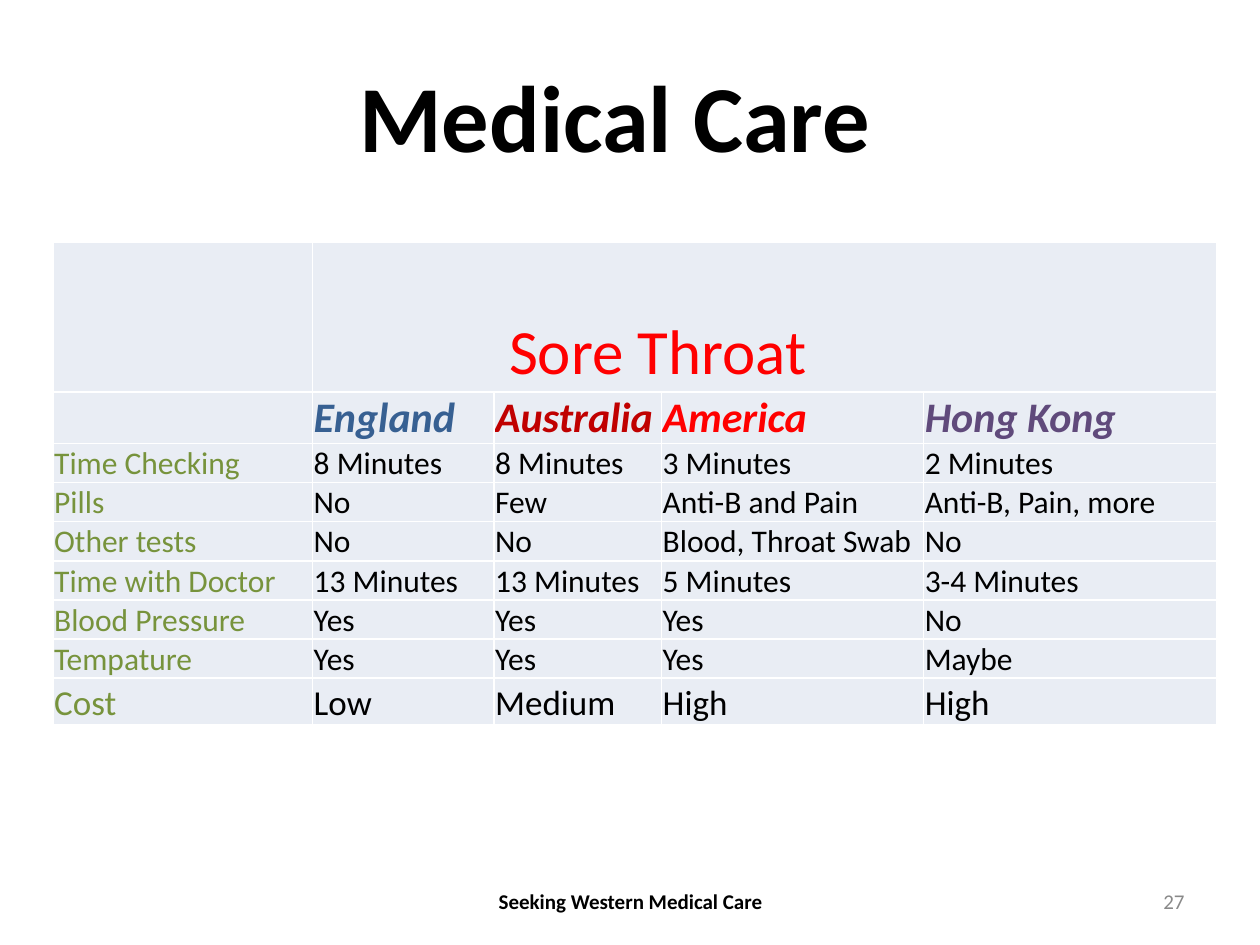
from dataclasses import dataclass

import lxml.etree
import pptx
import pptx.dml.color
import pptx.enum.text
import pptx.oxml.ns
import pptx.util

Inches = pptx.util.Inches
Align = pptx.enum.text.PP_ALIGN
Anchor = pptx.enum.text.MSO_ANCHOR


@dataclass(frozen=True)
class Theme:
    font: str = "Calibri"
    ink: str = "000000"
    muted: str = "898989"
    label: str = "77933C"
    symptom: str = "FF0000"
    cell: str = "E9EDF4"
    border: str = "FFFFFF"
    title_size: int = 54
    symptom_size: int = 36
    country_size: int = 24
    cost_size: int = 20
    body_size: int = 18
    footer_size: int = 12


THEME = Theme()

COUNTRIES = [
    ("England", "376092"),
    ("Australia", "C00000"),
    ("America", "FF0000"),
    ("Hong Kong", "604A7B"),
]
CARE_ROWS = [
    ("Time Checking", "8 Minutes", "8 Minutes", "3 Minutes", "2 Minutes"),
    ("Pills", "No", "Few", "Anti-B and Pain", "Anti-B, Pain, more"),
    ("Other tests", "No", "No", "Blood, Throat Swab", "No"),
    ("Time with Doctor", "13 Minutes", "13 Minutes", "5 Minutes", "3-4 Minutes"),
    ("Blood Pressure", "Yes", "Yes", "Yes", "No"),
    ("Tempature", "Yes", "Yes", "Yes", "Maybe"),
    ("Cost", "Low", "Medium", "High", "High"),
]
COLUMN_WIDTHS = [2.06, 1.44, 1.33, 2.08, 2.33]
ROW_HEIGHTS = [1.19, 0.28] + [0.25] * 6 + [0.37]


def write(frame, text, size, color, bold=False, italic=False, align=Align.LEFT):
    para = frame.paragraphs[0]
    para.text = text
    para.alignment = align
    font = para.font
    font.name = THEME.font
    font.size = pptx.util.Pt(size)
    font.bold, font.italic = bold, italic
    font.color.rgb = pptx.dml.color.RGBColor.from_string(color)


def add_title(page, left, top, width, height):
    title = page.shapes.title
    title.left, title.top, title.width, title.height = map(
        Inches, (left, top, width, height))
    frame = title.text_frame
    frame.word_wrap = False
    frame.auto_size = pptx.enum.text.MSO_AUTO_SIZE.NONE
    frame.vertical_anchor = Anchor.TOP
    write(frame, "Medical Care", THEME.title_size, THEME.ink, bold=True,
          align=Align.CENTER)


def add_footer_text(page, text, left, top, width, height, color, bold, align):
    box = page.shapes.add_textbox(*map(Inches, (left, top, width, height)))
    frame = box.text_frame
    frame.word_wrap = True
    frame.vertical_anchor = Anchor.MIDDLE
    write(frame, text, THEME.footer_size, color, bold=bold, align=align)


def format_cell(cell):
    cell.margin_left = cell.margin_right = cell.margin_top = Inches(0.01)
    cell.margin_bottom = 0
    cell.vertical_anchor = Anchor.BOTTOM
    # Borders come before the fill in the cell properties
    qn = pptx.oxml.ns.qn
    properties = cell._tc.get_or_add_tcPr()
    for side in ("a:lnL", "a:lnR", "a:lnT", "a:lnB"):
        line = lxml.etree.SubElement(properties, qn(side), w=str(pptx.util.Pt(1)))
        fill = lxml.etree.SubElement(line, qn("a:solidFill"))
        lxml.etree.SubElement(fill, qn("a:srgbClr"), val=THEME.border)
    cell.fill.solid()
    cell.fill.fore_color.rgb = pptx.dml.color.RGBColor.from_string(THEME.cell)


def add_care_table(page, left, top, width, height):
    graphic = page.shapes.add_table(
        len(ROW_HEIGHTS), len(COLUMN_WIDTHS),
        *map(Inches, (left, top, width, height)))
    table = graphic.table
    table.first_row = table.horz_banding = False
    for column, size in zip(table.columns, COLUMN_WIDTHS):
        column.width = Inches(size)
    for row, size in zip(table.rows, ROW_HEIGHTS):
        row.height = Inches(size)
    graphic.width, graphic.height = Inches(width), Inches(height)
    for cell in table.iter_cells():
        format_cell(cell)

    # Symptom heading across the countries
    symptom = table.cell(0, 1)
    symptom.merge(table.cell(0, len(COUNTRIES)))
    symptom.margin_left = Inches(1.56)
    write(symptom.text_frame, "Sore Throat", THEME.symptom_size, THEME.symptom)

    # Country names
    for column, (country, color) in enumerate(COUNTRIES, start=1):
        write(table.cell(1, column).text_frame, country, THEME.country_size,
              color, bold=True, italic=True)

    # Care in each country
    for row, values in enumerate(CARE_ROWS, start=2):
        size = THEME.cost_size if values[0] == "Cost" else THEME.body_size
        for column, value in enumerate(values):
            color = THEME.ink if column else THEME.label
            write(table.cell(row, column).text_frame, value, size, color)


def main():
    deck = pptx.Presentation()
    deck.slide_width, deck.slide_height = Inches(10), Inches(7.5)
    page = deck.slides.add_slide(deck.slide_layouts.get_by_name("Title Only"))
    add_footer_text(page, "Seeking Western Medical Care", 3.42, 6.95, 3.17, 0.4,
                    THEME.ink, True, Align.CENTER)
    add_footer_text(page, "27", 7.17, 6.95, 2.33, 0.4,
                    THEME.muted, False, Align.RIGHT)
    add_care_table(page, 0.42, 1.92, 9.25, 3.82)
    add_title(page, 2.73, 0.41, 4.3, 1.01)
    deck.save("out.pptx")


if __name__ == "__main__":
    main()
